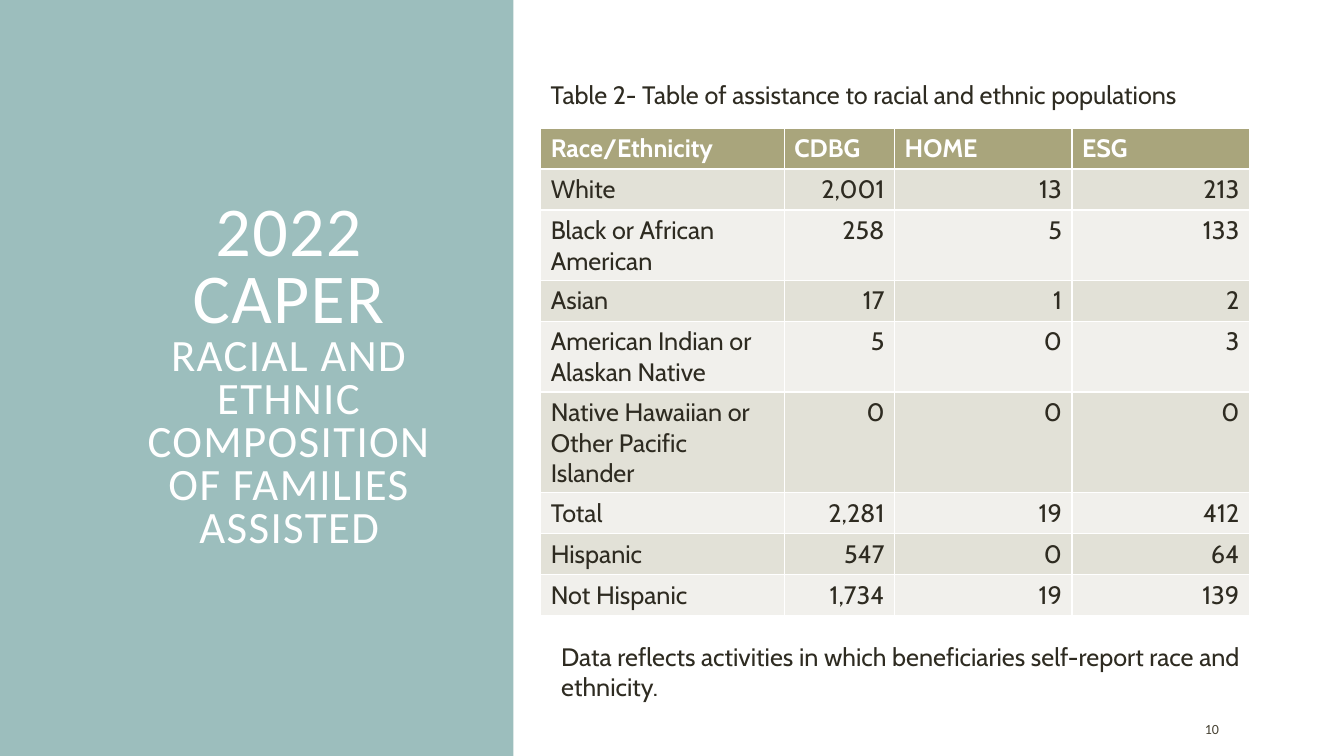
from pptx import Presentation
from pptx import util as u
from pptx.dml.color import RGBColor
from pptx.enum import shapes, text

PX = 9525  # EMU per px, 96 px to the inch

WHITE = RGBColor(0xFF, 0xFF, 0xFF)
TEAL = RGBColor(0x9C, 0xBE, 0xBD)
OLIVE = RGBColor(0xA9, 0xA5, 0x7C)
BAND_DARK = RGBColor(0xE2, 0xE1, 0xD7)
BAND_LIGHT = RGBColor(0xF1, 0xF0, 0xEC)
INK = RGBColor(0x2E, 0x2B, 0x21)
BROWN = RGBColor(0x47, 0x42, 0x33)

COLUMN_WIDTHS = [232, 105, 169, 169]
ROW_HEIGHT = 39
ROWS = [
    ("Race/Ethnicity", "CDBG", "HOME", "ESG"),
    ("White", "2,001", "13", "213"),
    ("Black or African American", "258", "5", "133"),
    ("Asian", "17", "1", "2"),
    ("American Indian or Alaskan Native", "5", "0", "3"),
    ("Native Hawaiian or Other Pacific Islander", "0", "0", "0"),
    ("Total", "2,281", "19", "412"),
    ("Hispanic", "547", "0", "64"),
    ("Not Hispanic", "1,734", "19", "139"),
]


def px(*lengths):
    return [u.Emu(length * PX) for length in lengths]


def set_font(font, name, size, color, bold=False):
    font.name = name
    font.size = u.Pt(size)
    font.color.rgb = color
    font.bold = bold


def add_panel(page, *place):
    panel = page.shapes.add_shape(shapes.MSO_SHAPE.RECTANGLE, *px(*place))
    panel.shadow.inherit = False
    panel.fill.solid()
    panel.fill.fore_color.rgb = TEAL
    panel.line.fill.background()
    # Send the panel behind the title
    page.shapes._spTree.insert(2, panel._element)


def add_title(page, parts, *place):
    title = page.shapes.title
    title.left, title.top, title.width, title.height = px(*place)
    frame = title.text_frame
    frame.word_wrap = True
    frame.auto_size = text.MSO_AUTO_SIZE.NONE
    frame.vertical_anchor = text.MSO_ANCHOR.MIDDLE
    para = frame.paragraphs[0]
    para.alignment = text.PP_ALIGN.CENTER
    para.line_spacing = 0.8
    for words, size in parts:
        span = para.add_run()
        span.text = words
        set_font(span.font, "Calibri", size, WHITE)
        span.font._element.set("spc", "100")  # letter spacing, 1 pt


def add_text(page, words, place, name="Cabin", size=18, color=INK,
             anchor=text.MSO_ANCHOR.TOP):
    box = page.shapes.add_textbox(*px(*place))
    frame = box.text_frame
    frame.word_wrap = True
    frame.vertical_anchor = anchor
    para = frame.paragraphs[0]
    para.text = words
    set_font(para.font, name, size, color)


def add_assistance_table(page, left, top):
    place = px(left, top, sum(COLUMN_WIDTHS), ROW_HEIGHT * len(ROWS))
    table = page.shapes.add_table(len(ROWS), len(COLUMN_WIDTHS), *place).table
    for column, width in zip(table.columns, px(*COLUMN_WIDTHS)):
        column.width = width
    for r, values in enumerate(ROWS):
        header = r == 0
        band = BAND_DARK if r % 2 else BAND_LIGHT
        for c, value in enumerate(values):
            cell = table.cell(r, c)
            cell.fill.solid()
            cell.fill.fore_color.rgb = OLIVE if header else band
            para = cell.text_frame.paragraphs[0]
            para.text = value
            set_font(para.font, "Cabin", 18, WHITE if header else INK, header)
            if c and not header:
                para.alignment = text.PP_ALIGN.RIGHT


def main():
    deck = Presentation()
    deck.slide_width, deck.slide_height = px(1280, 720)
    page = deck.slides.add_slide(deck.slide_layouts[5])

    # Left side: coloured panel and title
    add_panel(page, 0, 0, 489, 720)
    add_title(page, [
        ("2022 CAPER ", 50),
        ("RACIAL AND ETHNIC COMPOSITION OF FAMILIES ASSISTED", 32),
    ], 102, 84, 347, 551)

    # Right side: caption, table and note
    add_text(page, "Table 2- Table of assistance to racial and ethnic populations",
             (515, 71, 652, 38))
    add_assistance_table(page, 515, 122)
    add_text(page, "Data reflects activities in which beneficiaries "
             "self-report race and ethnicity.", (525, 606, 676, 68))

    # Page number
    add_text(page, "10", (1138, 680, 102, 29), "Calibri", 10, BROWN,
             text.MSO_ANCHOR.MIDDLE)

    deck.save("out.pptx")


if __name__ == "__main__":
    main()
